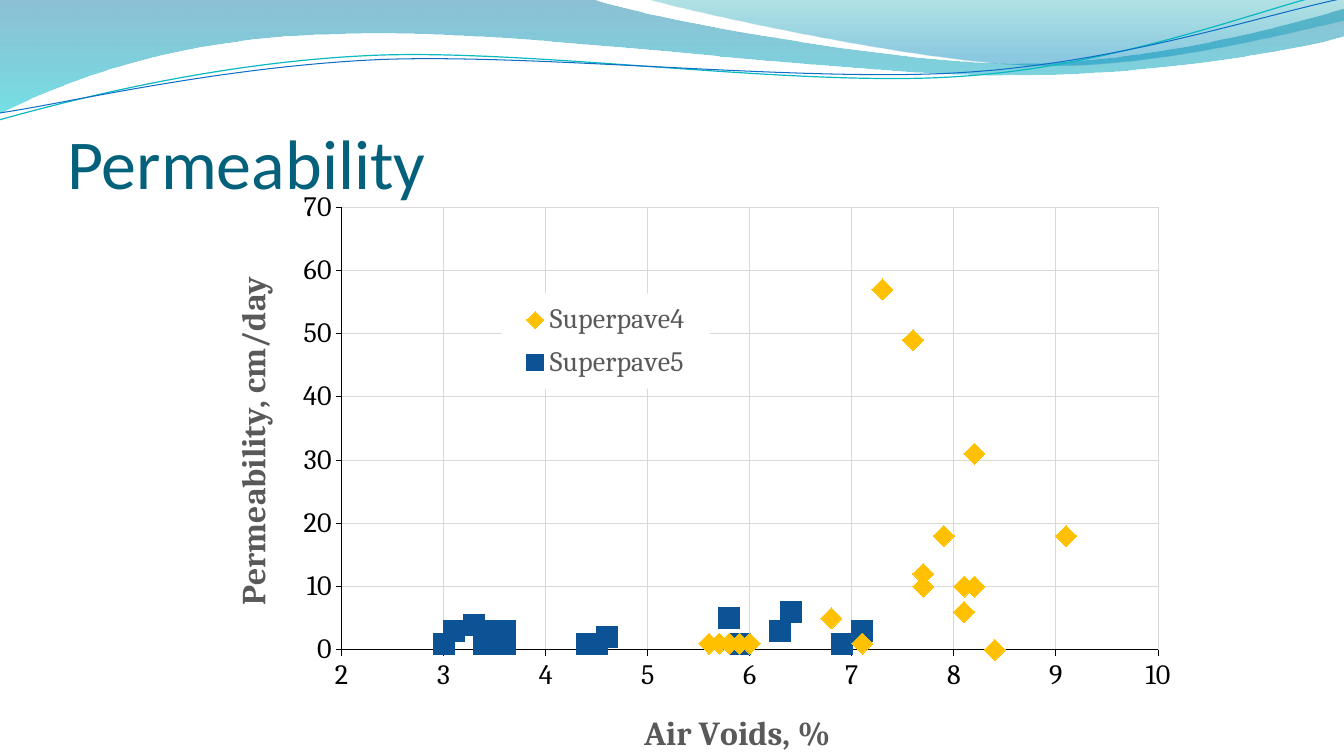
import pptx
import pptx.chart.data
import pptx.dml.color
import pptx.enum.chart
import pptx.enum.text
import pptx.oxml
import pptx.oxml.ns
import pptx.util

Pt = pptx.util.Pt
qn = pptx.oxml.ns.qn
COLORS = {
    "title": "04617B", "axis": "000000", "grid": "D9D9D9", "label": "595959",
    "paper": "FFFFFF", "superpave4": "FFC000", "superpave5": "0B5394",
    "wave_blue": "0074A1", "wave_cyan": "00C6CF", "wave_teal": "00A1A9",
    "wave_sky": "008BBF", "line_teal": "0AB8BF", "line_blue": "0F6FC6",
}
MARKERS = pptx.enum.chart.XL_MARKER_STYLE
SERIES = [
    ("Superpave4", "superpave4", MARKERS.DIAMOND,
     [7.7, 7.7, 8.1, 9.1, 8.4, 8.1, 7.1, 5.7, 6, 5.8, 5.9, 5.6, 8.2, 7.9, 7.6, 6.8, 8.2, 7.3],
     [10, 12, 10, 18, 0, 6, 1, 1, 1, 1, 1, 1, 10, 18, 49, 5, 31, 57]),
    ("Superpave5", "superpave5", MARKERS.SQUARE,
     [5.8, 4.6, 3.6, 4.5, 4.4, 3.1, 5.9, 5.9, 6.4, 7.1, 6.3, 6.9, 3.4, 3.6, 3, 3.3, 3.3, 3.5],
     [5, 2, 1, 1, 1, 3, 1, 1, 6, 3, 3, 1, 1, 3, 1, 4, 4, 3]),
]
BROAD_WAVE = [
    (0, 0), (422.6, -0.7),
    (456.5, 12.2, 637.2, 45.4, 727.9, 45.4), (819.4, 45.4, 920.2, 18.7, 959.8, 6.5),
    (961.2, 25.9),
    (943.9, 31.7, 835.2, 54.7, 715.7, 54), (596.9, 54, 366.5, 20.2, 247, 24.5),
    (123.1, 25.9, 43.9, 59.8, -0.7, 81.4), (0, 0),
]
RIGHT_WAVE = [
    (460.1, -0.7), (488.9, 7.9, 654.5, 44.6, 738, 46.8),
    (821.5, 49.7, 923, 23, 959.8, 15.1), (959.8, 0), (460.1, -0.7),
]
TEAL_LINE = [
    (-0.7, 85.7), (46.1, 72.7, 151.9, 44.6, 265.7, 39.6),
    (379.4, 34.6, 568.8, 62.6, 684, 54.7), (799.2, 47.5, 901.4, 5.8, 958.3, -7.2),
]
BLUE_LINE = [
    (0, 80.6), (45.4, 74.2, 157, 47.5, 272.2, 42.5),
    (386.6, 38.2, 573.1, 59, 687.6, 51.8), (802.8, 44.6, 903.6, 10.1, 960.5, -1.4),
]


def rgb(name):
    """Return the named colour."""
    return pptx.dml.color.RGBColor.from_string(COLORS[name])


def add_outline(slide, segments, close):
    """Add a freeform of straight lines and cubic curves."""
    points = [(segment[i] * 100, segment[i + 1] * 100)
              for segment in segments for i in range(0, len(segment), 2)]
    builder = slide.shapes.build_freeform(*points[0], scale=Pt(1) / 100)
    builder.add_line_segments(points[1:], close=close)
    shape = builder.convert_to_shape()
    shape.shadow.inherit = False
    lines = iter(list(shape._element.iter(qn("a:lnTo"))))
    for segment in segments[1:]:
        line = next(lines)
        if len(segment) == 6:
            curve = pptx.oxml.parse_xml(f'<a:cubicBezTo {pptx.oxml.ns.nsdecls("a")}/>')
            line.addprevious(curve)
            for part in (line, next(lines), next(lines)):
                curve.append(part[0])
                part.getparent().remove(part)
    return shape


def add_wave(slide, segments, stops):
    """Add a filled wave with a translucent gradient from top to bottom."""
    shape = add_outline(slide, segments, True)
    shape.line.fill.background()
    shape.fill.gradient()
    shape.fill.gradient_angle = 270
    for stop, (position, color, opacity) in zip(shape.fill.gradient_stops, stops):
        stop.position = position
        stop.color.rgb = rgb(color)
    tags = shape._element.spPr.iter(qn("a:srgbClr"))
    for tag, (position, color, opacity) in zip(tags, stops):
        tag.append(pptx.oxml.parse_xml(
            f'<a:alpha {pptx.oxml.ns.nsdecls("a")} val="{opacity * 1000}"/>'))


def add_wave_line(slide, segments, color, width):
    """Add a thin curved line."""
    shape = add_outline(slide, segments, False)
    shape.fill.background()
    shape.line.color.rgb = rgb(color)
    shape.line.width = Pt(width)


def add_title(slide, text):
    """Fill and format the title placeholder."""
    title = slide.shapes.title
    title.left, title.top, title.width, title.height = Pt(48), Pt(55.4), Pt(864), Pt(90)
    frame = title.text_frame
    frame.text = text
    frame.vertical_anchor = pptx.enum.text.MSO_ANCHOR.BOTTOM
    frame.margin_left = frame.margin_right = frame.margin_bottom = 0
    frame.paragraphs[0].alignment = pptx.enum.text.PP_ALIGN.LEFT
    format_font(frame.paragraphs[0].runs[0].font, 50, "title", "Calibri")


def format_font(font, size, color, name="Cambria", bold=False):
    """Set size, colour, face and weight."""
    font.size, font.name, font.bold = Pt(size), name, bold
    font.color.rgb = rgb(color)


def set_layout(element, index, target="", **places):
    """Place a chart part by fractions of the chart."""
    for old in element.findall(qn("c:layout")):
        element.remove(old)
    modes = "".join(f'<c:{key}Mode val="edge"/>' for key in "xy")
    values = "".join(f'<c:{key} val="{value}"/>' for key, value in places.items())
    element.insert(index, pptx.oxml.parse_xml(
        f'<c:layout {pptx.oxml.ns.nsdecls("c")}><c:manualLayout>'
        f'{target}{modes}{values}</c:manualLayout></c:layout>'))


def format_axis(axis, title, low, high, step, x, y):
    """Set the scale, lines, labels and title of an axis."""
    axis.minimum_scale, axis.maximum_scale, axis.major_unit = low, high, step
    axis.has_major_gridlines = True
    axis.major_tick_mark = pptx.enum.chart.XL_TICK_MARK.OUTSIDE
    axis.minor_tick_mark = pptx.enum.chart.XL_TICK_MARK.NONE
    axis.tick_labels.number_format = "0"
    axis.tick_labels.number_format_is_linked = False
    format_font(axis.tick_labels.font, 20, "axis")
    for line, color in ((axis.format.line, "axis"), (axis.major_gridlines.format.line, "grid")):
        line.color.rgb = rgb(color)
        line.width = Pt(0.75)
    frame = axis.axis_title.text_frame
    frame.text = title
    format_font(frame.paragraphs[0].runs[0].font, 24, "label", bold=True)
    set_layout(axis.axis_title._element, 1, x=x, y=y)


def format_legend(chart):
    """Place the legend on white inside the plot."""
    chart.has_legend = True
    legend = chart.legend
    legend.position = pptx.enum.chart.XL_LEGEND_POSITION.RIGHT
    legend.include_in_layout = False
    format_font(legend.font, 20, "label")
    set_layout(legend._element, 1, x=0.291, y=0.194, w=0.206, h=0.157)
    legend._element.find(qn("c:txPr")).addprevious(pptx.oxml.parse_xml(
        f'<c:spPr {pptx.oxml.ns.nsdecls("c", "a")}><a:solidFill>'
        f'<a:srgbClr val="{COLORS["paper"]}"/></a:solidFill></c:spPr>'))


def add_scatter(slide):
    """Add the scatter chart of permeability against air voids."""
    data = pptx.chart.data.XyChartData()
    for name, color, marker, air_voids, permeability in SERIES:
        series = data.add_series(name)
        for x, y in zip(air_voids, permeability):
            series.add_data_point(x, y)
    chart = slide.shapes.add_chart(
        pptx.enum.chart.XL_CHART_TYPE.XY_SCATTER,
        Pt(149), Pt(126), Pt(720), Pt(432), data).chart
    chart.has_title = False
    format_font(chart.font, 10, "axis")
    chart.plots[0].vary_by_categories = False
    for series, (name, color, marker, air_voids, permeability) in zip(chart.plots[0].series, SERIES):
        series.format.line.fill.background()
        series.marker.style, series.marker.size = marker, 15
        series.marker.format.fill.solid()
        series.marker.format.fill.fore_color.rgb = rgb(color)
        series.marker.format.line.color.rgb = rgb(color)
    format_axis(chart.category_axis, "Air Voids, %", 2, 10, 1, 0.426, 0.874)
    format_axis(chart.value_axis, "Permeability, cm/day", 0, 70, 10, 0.016, 0.156)
    format_legend(chart)
    plot_area = chart._chartSpace.chart.plotArea
    set_layout(plot_area, 0, '<c:layoutTarget val="inner"/>', x=0.132, y=0.051, w=0.81, h=0.732)


def main():
    """Build and save the permeability slide."""
    presentation = pptx.Presentation()
    presentation.slide_width, presentation.slide_height = Pt(960), Pt(540)
    slide = presentation.slides.add_slide(presentation.slide_layouts[5])
    add_wave(slide, BROAD_WAVE, [(0, "wave_blue", 45), (1, "wave_cyan", 55)])
    add_wave(slide, RIGHT_WAVE, [(0, "wave_teal", 30), (0.8, "wave_sky", 45)])
    add_wave_line(slide, TEAL_LINE, "line_teal", 0.85)
    add_wave_line(slide, BLUE_LINE, "line_blue", 0.75)
    add_title(slide, "Permeability")
    add_scatter(slide)
    presentation.save("out.pptx")


if __name__ == "__main__":
    main()
